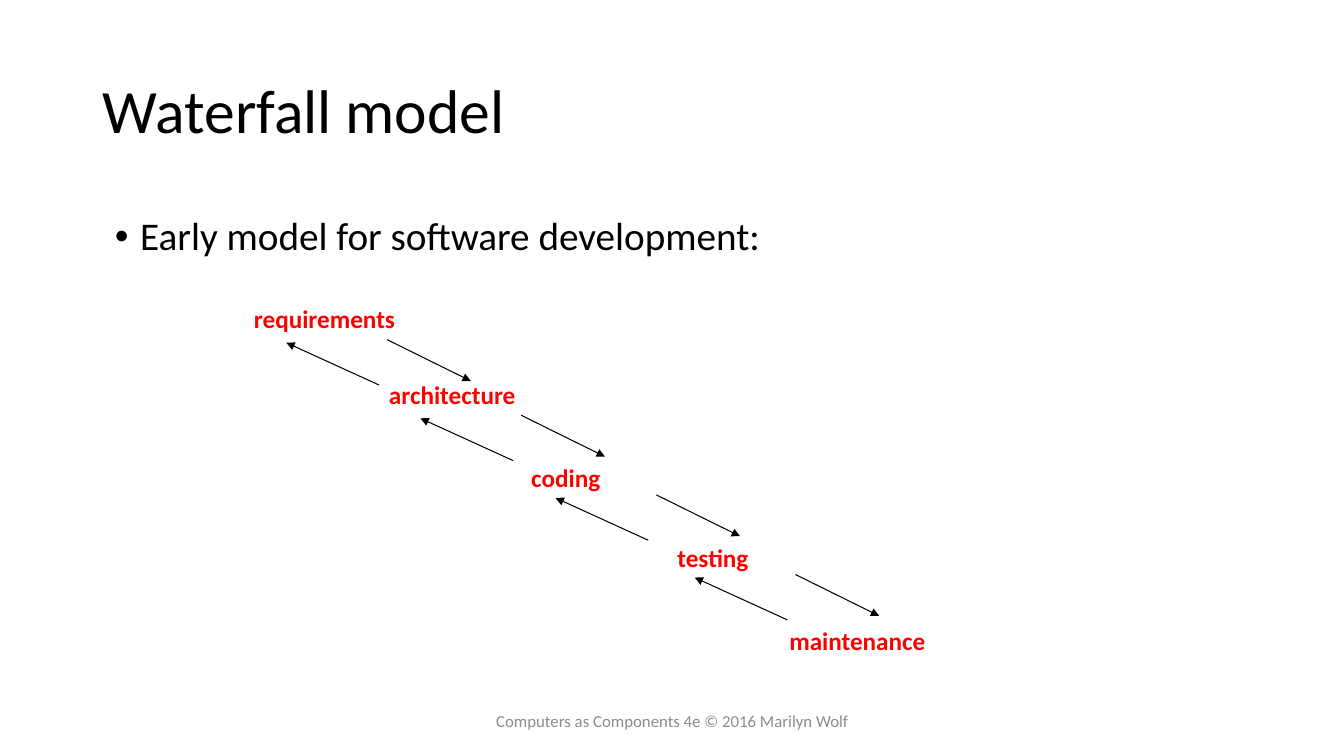
from typing import NamedTuple

from lxml import etree
from pptx import Presentation
from pptx.dml.color import RGBColor
from pptx.enum.shapes import MSO_CONNECTOR
from pptx.enum.text import MSO_ANCHOR, MSO_AUTO_SIZE, PP_ALIGN
from pptx.oxml.ns import qn
from pptx.util import Pt

LEFT, CENTER = PP_ALIGN.LEFT, PP_ALIGN.CENTER
TOP, MIDDLE = MSO_ANCHOR.TOP, MSO_ANCHOR.MIDDLE
FIXED, GROW = MSO_AUTO_SIZE.NONE, MSO_AUTO_SIZE.SHAPE_TO_FIT_TEXT
STRAIGHT = MSO_CONNECTOR.STRAIGHT

SCALE = 9144  # EMU per px, 100 px to the inch
FONT = "Calibri"
BLACK, RED, GRAY = "000000", "FF0000", "8C8C8C"


class Box(NamedTuple):
    x: int
    y: int
    w: int
    h: int


class Phase(NamedTuple):
    name: str
    box: Box


class Point(NamedTuple):
    x: int
    y: int


PHASES = [
    Phase("requirements", Box(242, 296, 161, 40)),
    Phase("architecture", Box(376, 371, 147, 40)),
    Phase("coding", Box(517, 454, 89, 40)),
    Phase("testing", Box(662, 533, 91, 40)),
    Phase("maintenance", Box(773, 615, 156, 40)),
]
# Where the arrow down to the next phase begins
STEPS = [Point(384, 337), Point(517, 412), Point(651, 491), Point(789, 570)]


def px(n: int) -> int:
    return n * SCALE


def color(code: str) -> RGBColor:
    return RGBColor.from_string(code)


def place(shape, box: Box) -> None:
    shape.left, shape.top, shape.width, shape.height = map(px, box)


def write(shape, text: str, size: int, ink: str, align=LEFT, anchor=TOP,
          bold: bool = False, wrap: bool = True, fit=FIXED):
    """Fill the shape with one paragraph and return it."""
    frame = shape.text_frame
    frame.text = text
    frame.word_wrap = wrap
    frame.auto_size = fit
    frame.vertical_anchor = anchor
    para = frame.paragraphs[0]
    para.alignment = align
    para.font.name = FONT
    para.font.size = Pt(size)
    para.font.bold = bold
    para.font.color.rgb = color(ink)
    return para


def label(slide, box: Box, text: str, size: int, ink: str, **style) -> None:
    write(slide.shapes.add_textbox(*map(px, box)), text, size, ink, **style)


def arrow(slide, start: Point, end: Point) -> None:
    link = slide.shapes.add_connector(STRAIGHT, *map(px, start + end))
    link.line.width = Pt(0.75)
    link.line.color.rgb = color(BLACK)
    etree.SubElement(link.line._get_or_add_ln(), qn("a:tailEnd"), type="triangle")
    etree.SubElement(link._element.spPr, qn("a:effectLst"))


def main() -> None:
    deck = Presentation()
    deck.slide_width, deck.slide_height = px(1333), px(750)
    slide = deck.slides.add_slide(deck.slide_layouts[1])

    title, body = slide.placeholders
    place(title, Box(92, 40, 1150, 145))
    head = write(title, "Waterfall model", 44, BLACK, anchor=MIDDLE)
    head.line_spacing = 0.9

    place(body, Box(104, 210, 894, 69))
    item = write(body, "Early model for software development:", 28, BLACK)
    item.line_spacing = 0.9
    item.space_before = Pt(10)
    props = item._p.get_or_add_pPr()
    props.set("marL", str(px(25)))
    props.set("indent", str(px(-25)))
    etree.SubElement(props, qn("a:buFont"), typeface="Arial")
    etree.SubElement(props, qn("a:buChar"), char="•")
    props.append(props.find(qn("a:defRPr")))  # schema wants it after the bullet

    for phase in PHASES:
        label(slide, phase.box, phase.name, 18, RED,
              bold=True, wrap=False, fit=GROW)

    for x, y in STEPS:
        arrow(slide, Point(x, y), Point(x + 83, y + 41))
        arrow(slide, Point(x - 8, y + 45), Point(x - 100, y + 3))

    label(slide, Box(442, 695, 450, 40),
          "Computers as Components 4e © 2016 Marilyn Wolf", 12, GRAY,
          align=CENTER, anchor=MIDDLE)

    deck.save("out.pptx")


if __name__ == "__main__":
    main()
